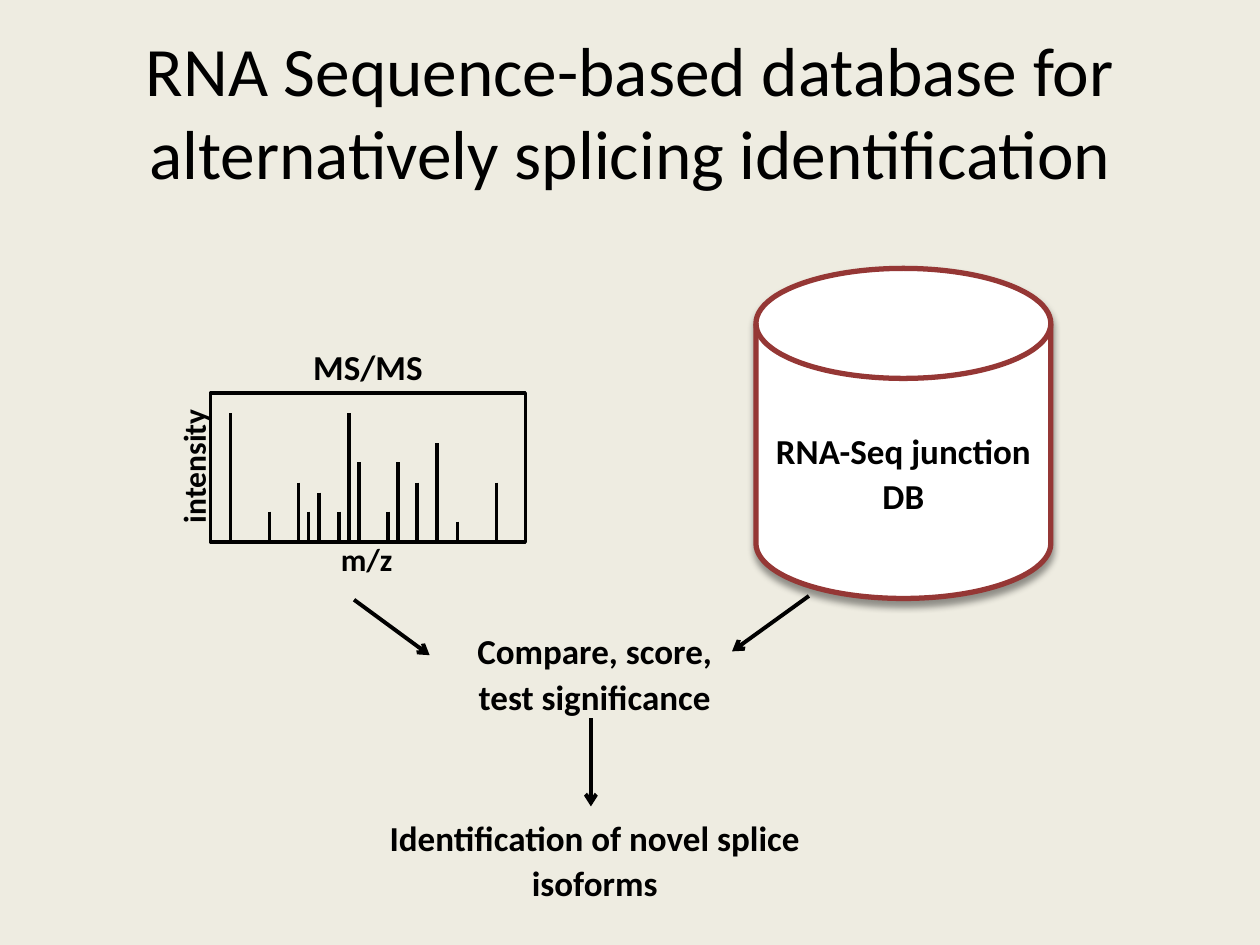
from dataclasses import dataclass

from lxml import etree
from pptx import Presentation
from pptx.dml.color import RGBColor
from pptx.enum.shapes import MSO_CONNECTOR, MSO_SHAPE
from pptx.enum.text import MSO_ANCHOR, PP_ALIGN
from pptx.oxml import parse_xml
from pptx.oxml.ns import nsdecls, qn
from pptx.util import Inches, Pt

STRAIGHT = MSO_CONNECTOR.STRAIGHT
DISK, RECTANGLE = MSO_SHAPE.FLOWCHART_MAGNETIC_DISK, MSO_SHAPE.RECTANGLE
TOP, MIDDLE = MSO_ANCHOR.TOP, MSO_ANCHOR.MIDDLE
CENTER = PP_ALIGN.CENTER


@dataclass(frozen=True)
class Theme:
    font: str = "Calibri"
    background: RGBColor = RGBColor(0xEE, 0xEC, 0xE1)
    ink: RGBColor = RGBColor(0, 0, 0)
    paper: RGBColor = RGBColor(0xFF, 0xFF, 0xFF)
    database: RGBColor = RGBColor(0x95, 0x37, 0x35)
    title: float = 39.6
    body: float = 20
    axis: float = 18
    leading: float = 26
    database_line: float = 3
    arrow_line: float = 2.25
    spectrum_line: float = 2


class SlideBuilder:
    """Draws styled elements on the current slide or group."""

    def __init__(self, slide, theme):
        self.slide, self.theme = slide, theme
        self.canvas = slide.shapes
        slide.background.fill.solid()
        slide.background.fill.fore_color.rgb = theme.background

    def start_group(self):
        self.canvas = self.slide.shapes.add_group_shape().shapes

    def text(self, words, box, size, bold=True, leading=None, wrap=True, anchor=TOP, rotation=0):
        label = self.canvas.add_textbox(*map(Inches, box))
        label.rotation = rotation
        frame = label.text_frame
        frame.text = words
        frame.word_wrap = wrap
        frame.vertical_anchor = anchor
        paragraph = frame.paragraphs[0]
        paragraph.alignment = CENTER
        if leading:
            paragraph.line_spacing = Pt(leading)
        font = paragraph.runs[0].font
        font.name, font.size, font.bold = self.theme.font, Pt(size), bold
        font.color.rgb = self.theme.ink

    def outline(self, kind, box, color, width, fill=None):
        shape = self.canvas.add_shape(kind, *map(Inches, box))
        shape.shadow.inherit = False
        if fill is None:
            shape.fill.background()
        else:
            shape.fill.solid()
            shape.fill.fore_color.rgb = fill
        shape.line.color.rgb, shape.line.width = color, Pt(width)
        return shape

    def database(self, box):
        theme = self.theme
        disk = self.outline(DISK, box, theme.database, theme.database_line, theme.paper)
        effects = disk._element.spPr.find(qn("a:effectLst"))
        effects.append(parse_xml(
            f'<a:outerShdw {nsdecls("a")} blurRad="{Pt(4)}" dist="{Pt(3)}" dir="5400000" '
            f'rotWithShape="0"><a:srgbClr val="{theme.ink}"><a:alpha val="40000"/>'
            '</a:srgbClr></a:outerShdw>'))

    def line(self, start, end, width):
        stroke = self.canvas.add_connector(STRAIGHT, *map(Inches, (*start, *end)))
        stroke.line.color.rgb, stroke.line.width = self.theme.ink, Pt(width)
        etree.SubElement(stroke._element.spPr, qn("a:effectLst"))
        return stroke

    def arrow(self, start, end):
        stroke = self.line(start, end, self.theme.arrow_line)
        etree.SubElement(stroke.line._get_or_add_ln(), qn("a:tailEnd"), type="arrow")

    def spectrum(self, frame, peaks):
        self.start_group()
        self.outline(RECTANGLE, frame, self.theme.ink, self.theme.spectrum_line)
        baseline = frame[1] + frame[3]
        for mass, intensity in peaks:
            self.line((mass, baseline - intensity), (mass, baseline), self.theme.spectrum_line)


def main():
    theme = Theme()
    deck = Presentation()
    deck.slide_width, deck.slide_height = Inches(10), Inches(7.5)
    builder = SlideBuilder(deck.slides.add_slide(deck.slide_layouts[6]), theme)

    builder.text("RNA Sequence-based database for alternatively splicing identification",
                 (0.5, 0.25, 9, 1.25), theme.title, bold=False, anchor=MIDDLE)
    builder.database((6, 2.13, 2.34, 2.62))

    steps = [
        ("RNA-Seq junction DB", (6.05, 3.33, 2.24, 0.81)),
        ("Compare, score, test significance", (3.49, 4.92, 2.46, 0.83)),
        ("Identification of novel splice isoforms", (2.52, 6.4, 4.4, 0.83)),
    ]
    for words, box in steps:
        builder.text(words, box, theme.body, leading=theme.leading)

    flows = [
        ((2.81, 4.76), (3.41, 5.2)),
        ((6.42, 4.73), (5.81, 5.17)),
        ((4.69, 5.7), (4.69, 6.4)),
    ]
    for start, end in flows:
        builder.arrow(start, end)

    peaks = [
        (1.83, 1.02), (2.14, 0.24), (2.37, 0.47), (2.45, 0.24), (2.53, 0.39),
        (2.69, 0.24), (2.77, 1.02), (2.85, 0.63), (3.08, 0.24), (3.16, 0.63),
        (3.31, 0.47), (3.47, 0.78), (3.63, 0.16), (3.94, 0.47),
    ]
    builder.spectrum((1.67, 3.12, 2.5, 1.18), peaks)
    builder.text("MS/MS", (2.38, 2.69, 1.08, 0.44), theme.body, wrap=False)
    builder.text("m/z", (2.6, 4.24, 0.62, 0.4), theme.axis, wrap=False)
    builder.text("intensity", (0.98, 3.5, 1.11, 0.4), theme.axis, wrap=False, rotation=270)

    deck.save("out.pptx")


if __name__ == "__main__":
    main()
